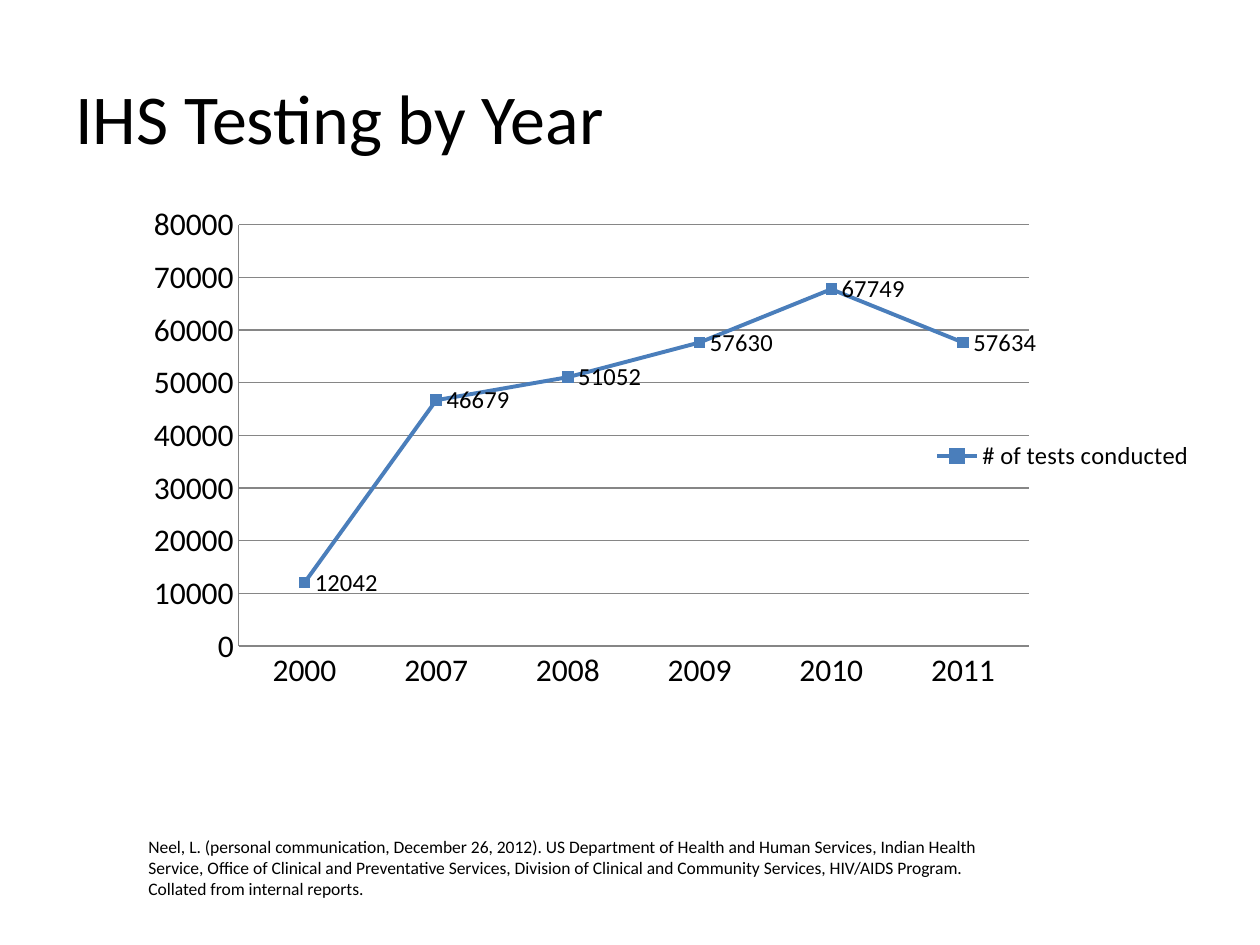
"""Build the IHS Testing by Year slide with its line chart and citation."""
from lxml import etree
from pptx import Presentation
from pptx import util as u
from pptx.chart.data import CategoryChartData
from pptx.dml.color import RGBColor
from pptx.enum import chart as ch, text
from pptx.oxml import ns

BLACK = RGBColor(0x00, 0x00, 0x00)
WHITE = RGBColor(0xFF, 0xFF, 0xFF)
GRAY = RGBColor(0x86, 0x86, 0x86)
LINE = RGBColor(0x4A, 0x7E, 0xBB)
MARKER = RGBColor(0x4F, 0x81, 0xBD)
FONT = "Calibri"
PX = 914400 / 126


def px(*lengths):
    return [u.Emu(round(n * PX)) for n in lengths]


def set_font(font, size):
    font.name = FONT
    font.size = u.Pt(size)
    font.color.rgb = BLACK


prs = Presentation()
prs.slide_width, prs.slide_height = px(1260, 945)
s = prs.slides.add_slide(prs.slide_layouts[6])
s.background.fill.solid()
s.background.fill.fore_color.rgb = WHITE

texts = [
    ("IHS Testing by Year", (63, 38, 1134, 158), 40, text.MSO_ANCHOR.MIDDLE),
    ("Neel, L. (personal communication, December 26, 2012). US Department of "
     "Health and Human Services, Indian Health Service, Office of Clinical and "
     "Preventative Services, Division of Clinical and Community Services, "
     "HIV/AIDS Program. Collated from internal reports.",
     (136, 830, 892, 77), 10, text.MSO_ANCHOR.TOP),
]
for words, box, size, anchor in texts:
    tf = s.shapes.add_textbox(*px(*box)).text_frame
    tf.word_wrap = True
    tf.vertical_anchor = anchor
    p = tf.paragraphs[0]
    p.text = words
    set_font(p.font, size)

data = CategoryChartData()
data.categories = ["2000", "2007", "2008", "2009", "2010", "2011"]
data.add_series("# of tests conducted", [12042, 46679, 51052, 57630, 67749, 57634])
chart = s.shapes.add_chart(ch.XL_CHART_TYPE.LINE_MARKERS, *px(94, 199, 1113, 514), data).chart
set_font(chart.font, 18)
chart.has_title = False
chart.has_legend = True
chart.legend.position = ch.XL_LEGEND_POSITION.RIGHT
chart.legend.include_in_layout = False
set_font(chart.legend.font, 14)

for axis in (chart.category_axis, chart.value_axis):
    axis.major_tick_mark = axis.minor_tick_mark = ch.XL_TICK_MARK.NONE
    axis.format.line.color.rgb = GRAY
    axis.format.line.width = u.Pt(0.75)
value_axis = chart.value_axis
value_axis.minimum_scale, value_axis.maximum_scale, value_axis.major_unit = 0, 80000, 10000
value_axis.has_major_gridlines = True
value_axis.major_gridlines.format.line.color.rgb = GRAY
value_axis.major_gridlines.format.line.width = u.Pt(0.75)

plot = chart.plots[0]
plot.vary_by_categories = False
series = plot.series[0]
series.smooth = False
series.format.line.color.rgb = LINE
series.format.line.width = u.Pt(2.25)
series.marker.style = ch.XL_MARKER_STYLE.SQUARE
series.marker.size = 6
series.marker.format.fill.solid()
series.marker.format.fill.fore_color.rgb = MARKER
series.marker.format.line.color.rgb = LINE
labels = series.data_labels
labels.show_value = True
labels.position = ch.XL_LABEL_POSITION.RIGHT
set_font(labels.font, 14)

area = chart.element.find(".//" + ns.qn("c:plotArea"))
for old in area.findall(ns.qn("c:layout")):
    area.remove(old)
layout = etree.Element(ns.qn("c:layout"))
manual = etree.SubElement(layout, ns.qn("c:manualLayout"))
for tag, val in (("layoutTarget", "inner"), ("xMode", "edge"), ("yMode", "edge"),
                 ("x", "0.13"), ("y", "0.05"), ("w", "0.71"), ("h", "0.82")):
    etree.SubElement(manual, ns.qn("c:" + tag)).set("val", val)
area.insert(0, layout)

prs.save("out.pptx")
